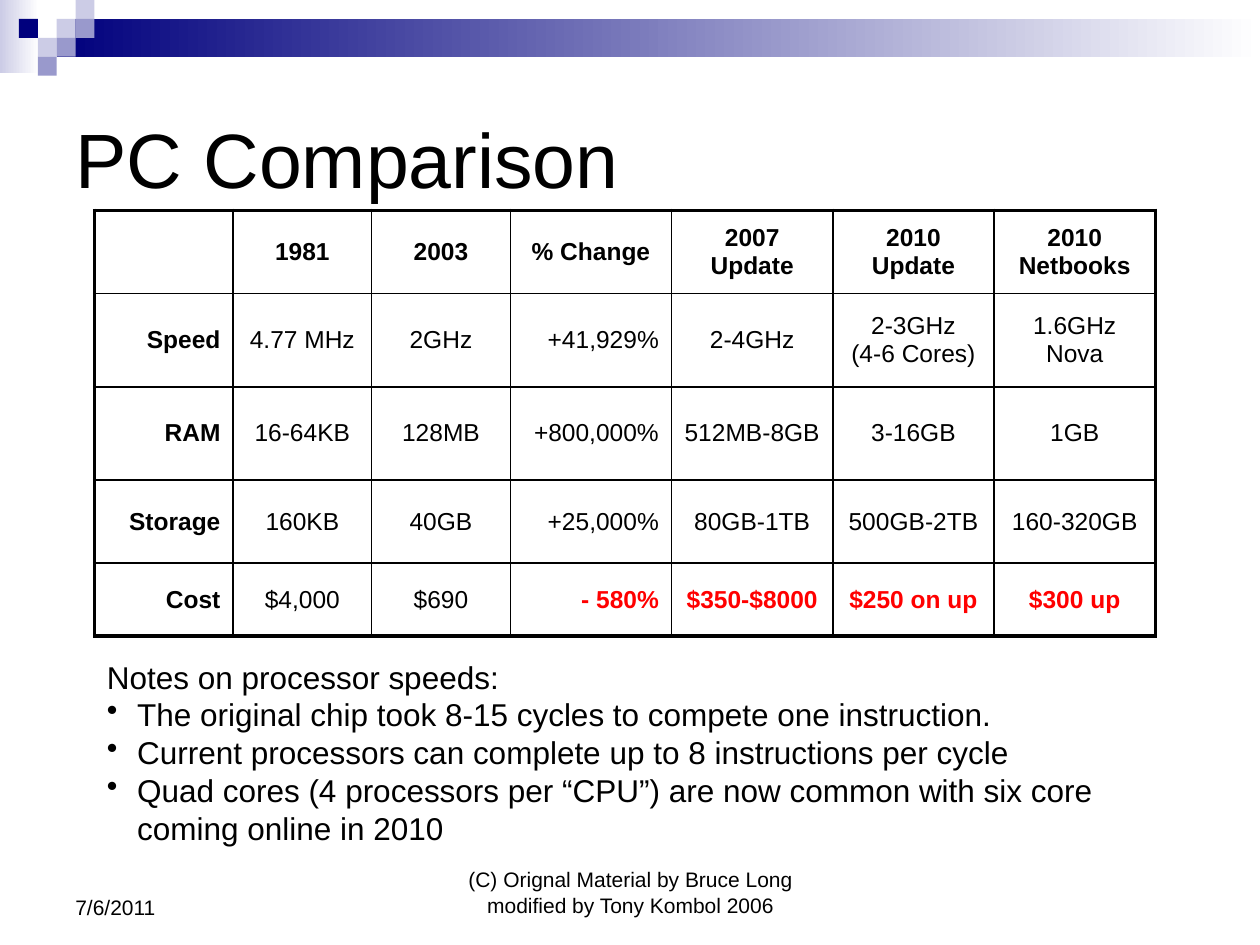
import pptx
import pptx.dml.color
import pptx.enum.shapes
import pptx.enum.text
import pptx.oxml
import pptx.oxml.ns
import pptx.util

Inches, Pt = pptx.util.Inches, pptx.util.Pt
ALIGN = {"l": pptx.enum.text.PP_ALIGN.LEFT,
         "c": pptx.enum.text.PP_ALIGN.CENTER,
         "r": pptx.enum.text.PP_ALIGN.RIGHT}
ANCHOR = pptx.enum.text.MSO_ANCHOR

# Content
TITLE = "PC Comparison"
DATE = "7/6/2011"
CREDIT = "(C) Orignal Material by Bruce Long modified by Tony Kombol 2006"
ROWS = [
    ["", "1981", "2003", "% Change", "2007 Update", "2010 Update", "2010 Netbooks"],
    ["Speed", "4.77 MHz", "2GHz", "+41,929%", "2-4GHz", "2-3GHz\n(4-6 Cores)", "1.6GHz Nova"],
    ["RAM", "16-64KB", "128MB", "+800,000%", "512MB-8GB", "3-16GB", "1GB"],
    ["Storage", "160KB", "40GB", "+25,000%", "80GB-1TB", "500GB-2TB", "160-320GB"],
    ["Cost", "$4,000", "$690", "- 580%", "$350-$8000", "$250 on up", "$300 up"],
]
NOTES_HEAD = "Notes on processor speeds:"
NOTES = [
    "The original chip took 8-15 cycles to compete one instruction.",
    "Current processors can complete up to 8 instructions per cycle",
    "Quad cores (4 processors per “CPU”) are now common with six core coming online in 2010",
]

# Theme and sizes
THEME = {"font": "Arial", "text": "000000", "alert": "FF0000", "white": "FFFFFF",
         "navy": "00007D", "mid": "9999CC", "pale": "CCCCE6",
         "title": 44, "notes": 18, "cell": 14, "foot": 12,
         "thick": 2.25, "thin": 1}
WIDTHS = [1.1] * 3 + [1.28] * 4
HEIGHTS = [0.66, 0.74, 0.74, 0.66, 0.58]
STEP = 0.15
TILES = [(3, 1, "pale"), (4, 0, "pale"), (4, 1, "mid"), (2, 2, "pale"),
         (1, 1, "navy"), (3, 2, "mid"), (2, 3, "mid")]  # column, row, colour


def rgb(name):
    return pptx.dml.color.RGBColor.from_string(THEME[name])


def write(par, text, size, color="text", bold=False, align="l", before=0, bullet=False):
    """Put text in a paragraph and format it."""
    par.text = text
    par.alignment = ALIGN[align]
    par.space_before = Pt(before)
    for run in par.runs:
        run.font.name = THEME["font"]
        run.font.size = Pt(THEME[size])
        run.font.bold = bold
        run.font.color.rgb = rgb(color)
    if bullet:
        props = par._p.get_or_add_pPr()
        props.set("marL", str(Inches(0.24)))
        props.set("indent", str(-Inches(0.24)))
        props.append(pptx.oxml.parse_xml(
            f'<a:buChar {pptx.oxml.ns.nsdecls("a")} char="•"/>'))


def frame(slide, left, top, width, height, anchor=ANCHOR.TOP):
    box = slide.shapes.add_textbox(*map(Inches, (left, top, width, height)))
    box.text_frame.word_wrap = True
    box.text_frame.vertical_anchor = anchor
    return box.text_frame


def block(slide, left, top, width, height, color, fade=False):
    """Draw a plain rectangle, or one that fades to white."""
    shape = slide.shapes.add_shape(pptx.enum.shapes.MSO_SHAPE.RECTANGLE,
                                   *map(Inches, (left, top, width, height)))
    shape.shadow.inherit = False
    shape.line.fill.background()
    if fade:
        shape.fill.gradient()
        shape.fill.gradient_angle = 0
        for stop, name in zip(shape.fill.gradient_stops, (color, "white")):
            stop.color.rgb = rgb(name)
    else:
        shape.fill.solid()
        shape.fill.fore_color.rgb = rgb(color)


def border(cell, edges):
    """Draw the four sides; thick ones lie on the table's rim."""
    props = cell._tc.get_or_add_tcPr()
    for spot, (side, rim) in enumerate(edges.items()):
        width = Pt(THEME["thick" if rim else "thin"])
        props.insert(spot, pptx.oxml.parse_xml(
            f'<a:ln{side} {pptx.oxml.ns.nsdecls("a")} w="{width}"><a:solidFill>'
            f'<a:srgbClr val="{THEME["text"]}"/></a:solidFill></a:ln{side}>'))


def add_grid(slide):
    rows, cols = len(HEIGHTS), len(WIDTHS)
    table = slide.shapes.add_table(
        rows, cols, Inches(0.75), Inches(1.67),
        Inches(sum(WIDTHS)), Inches(sum(HEIGHTS))).table
    table.first_row = table.horz_banding = False
    for col, width in zip(table.columns, WIDTHS):
        col.width = Inches(width)
    for y, texts in enumerate(ROWS):
        table.rows[y].height = Inches(HEIGHTS[y])
        for x, text in enumerate(texts):
            cell = table.cell(y, x)
            cell.fill.background()
            cell.vertical_anchor = ANCHOR.MIDDLE
            alert = y == rows - 1 and x >= 3
            write(cell.text_frame.paragraphs[0], text, "cell",
                  color="alert" if alert else "text",
                  bold=y == 0 or x == 0 or alert,
                  align="r" if y and x in (0, 3) else "c",
                  before=0.2 * THEME["cell"])
            border(cell, {"L": x == 0, "R": x == cols - 1,
                          "T": y == 0, "B": y == rows - 1})


def main():
    deck = pptx.Presentation()
    deck.slide_width, deck.slide_height = Inches(10), Inches(7.5)
    slide = deck.slides.add_slide(deck.slide_layouts[6])

    # Top band and tiles
    block(slide, 0, 0, 0.31, 0.58, "pale", fade=True)
    block(slide, 0.45, 0.15, 9.55, 0.3, "navy", fade=True)
    for col, row, color in TILES:
        block(slide, col * STEP, row * STEP, STEP, STEP, color)

    # Footer and title
    foot = frame(slide, 3.42, 6.83, 3.17, 0.5, ANCHOR.BOTTOM)
    write(foot.paragraphs[0], CREDIT, "foot", align="c")
    date = frame(slide, 0.5, 6.83, 2.33, 0.52, ANCHOR.BOTTOM)
    write(date.paragraphs[0], DATE, "foot")
    head = frame(slide, 0.5, 0.5, 9, 1.5, ANCHOR.MIDDLE)
    write(head.paragraphs[0], TITLE, "title")

    # Table and notes
    add_grid(slide)
    notes = frame(slide, 0.75, 5.17, 8.83, 1.6)
    write(notes.paragraphs[0], NOTES_HEAD, "notes")
    for note in NOTES:
        write(notes.add_paragraph(), note, "notes", bullet=True)

    deck.save("out.pptx")


if __name__ == "__main__":
    main()
